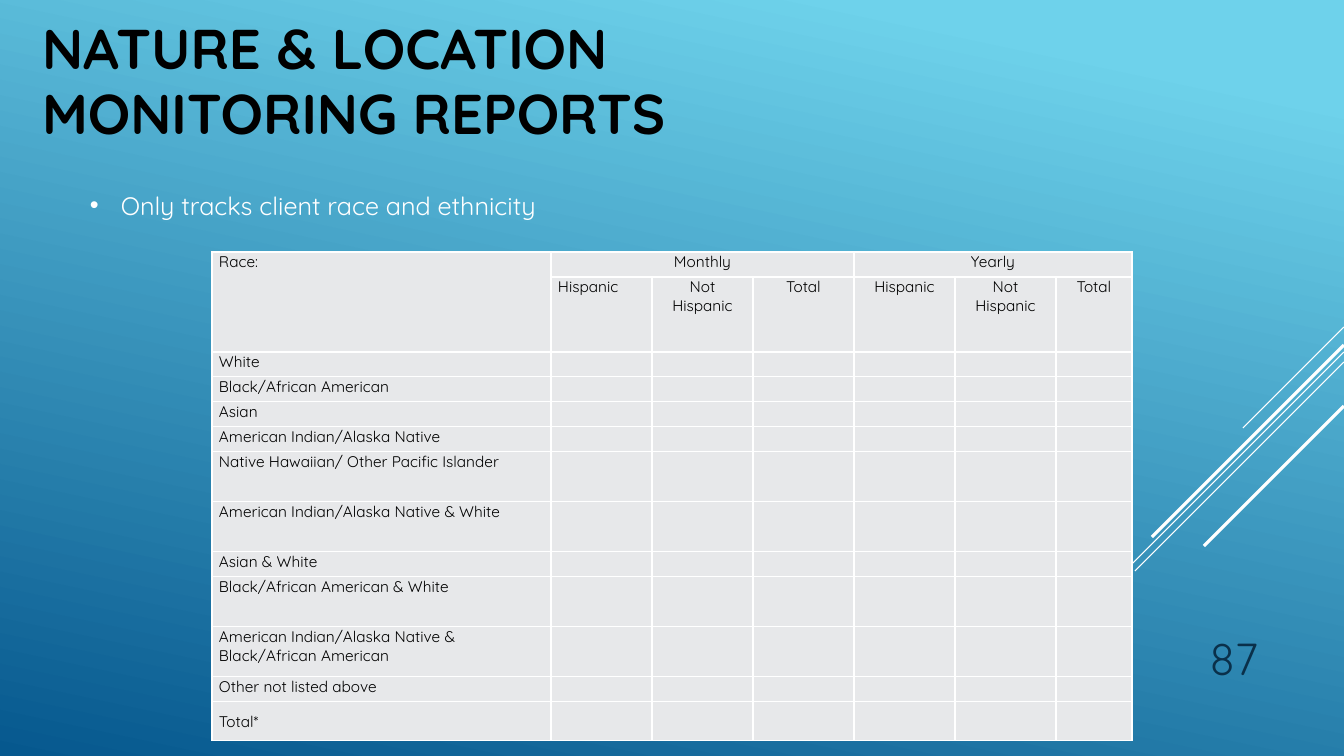
from dataclasses import dataclass

from lxml.etree import SubElement
from pptx import Presentation
from pptx.dml.color import RGBColor
from pptx.enum.shapes import MSO_CONNECTOR
from pptx.enum.text import MSO_ANCHOR as Anchor, MSO_AUTO_SIZE as AutoSize, PP_ALIGN as Align
from pptx.oxml.ns import qn
from pptx.util import Pt

EMU_PER_PX = 914400 / 100.8
TITLE_ONLY = 5


def px(length):
    return round(length * EMU_PER_PX)


@dataclass(frozen=True)
class Theme:
    font: str = "Quicksand"
    sky: str = "6ED2EB"
    deep: str = "06588E"
    white: str = "FFFFFF"
    black: str = "000000"
    navy: str = "0A304A"
    cell: str = "E7E8EA"
    title_size: int = 40
    number_size: int = 32
    body_size: int = 18
    table_size: int = 11


class SlideBuilder:
    def __init__(self, slide, theme):
        self.slide = slide
        self.theme = theme

    def background(self, angle, stops):
        fill = self.slide.background.fill
        fill.gradient()
        fill.gradient_angle = 360 - angle
        for stop, (position, color) in zip(fill.gradient_stops, stops):
            stop.position = position
            stop.color.rgb = RGBColor.from_string(color)

    def style_font(self, font, size, color, bold=False):
        formats = {"name": self.theme.font, "size": Pt(size), "bold": bold}
        for name, value in formats.items():
            setattr(font, name, value)
        font.color.rgb = RGBColor.from_string(color)

    def fill_text(self, frame, lines, size, color, bold=False, align=Align.LEFT, line_spacing=None):
        frame.text = "\n".join(lines)
        for paragraph in frame.paragraphs:
            paragraph.alignment = align
            paragraph.line_spacing = line_spacing
            for run in paragraph.runs:
                self.style_font(run.font, size, color, bold)

    def title(self, box, lines):
        shape = self.slide.shapes.title
        shape.left, shape.top, shape.width, shape.height = map(px, box)
        frame = shape.text_frame
        formats = {"word_wrap": True, "vertical_anchor": Anchor.TOP, "auto_size": AutoSize.SHAPE_TO_FIT_TEXT}
        for name, value in formats.items():
            setattr(frame, name, value)
        self.fill_text(frame, lines, self.theme.title_size, self.theme.black, True, line_spacing=0.96)

    def text(self, box, line, size, color, align=Align.LEFT, anchor=Anchor.TOP):
        frame = self.slide.shapes.add_textbox(*map(px, box)).text_frame
        frame.word_wrap = True
        frame.vertical_anchor = anchor
        self.fill_text(frame, [line], size, color, align=align)
        return frame

    def bullet(self, box, line, indent):
        frame = self.text(box, line, self.theme.body_size, self.theme.white)
        properties = frame.paragraphs[0]._p.get_or_add_pPr()
        properties.set("marL", str(px(indent)))
        properties.set("indent", str(-px(indent)))
        SubElement(properties, qn("a:buFont"), typeface="Arial")
        SubElement(properties, qn("a:buChar"), char="•")

    def diagonal(self, right, top, run, weight):
        ends = map(px, (right, top, right - run, top + run))
        line = self.slide.shapes.add_connector(MSO_CONNECTOR.STRAIGHT, *ends)
        line.line.color.rgb = RGBColor.from_string(self.theme.white)
        line.line.width = Pt(weight)
        SubElement(line._element.spPr, qn("a:effectLst"))

    def table(self, left, top, columns, rows):
        box = map(px, (left, top, sum(columns), sum(rows)))
        table = self.slide.shapes.add_table(len(rows), len(columns), *box).table
        table.first_row = table.horz_banding = False
        for column, width in zip(table.columns, columns):
            column.width = px(width)
        for row, height in zip(table.rows, rows):
            row.height = px(height)
        for cell in table.iter_cells():
            self.style_cell(cell)
        return table

    def style_cell(self, cell):
        margins = {"margin_left": 7, "margin_right": 7, "margin_top": 0, "margin_bottom": 0}
        for name, value in margins.items():
            setattr(cell, name, px(value))
        properties = cell._tc.get_or_add_tcPr()
        for side in ("a:lnL", "a:lnR", "a:lnT", "a:lnB"):
            border = SubElement(properties, qn(side), w=str(Pt(1)))
            SubElement(SubElement(border, qn("a:solidFill")), qn("a:srgbClr"), val=self.theme.white)
        cell.fill.solid()
        cell.fill.fore_color.rgb = RGBColor.from_string(self.theme.cell)
        # Empty cells need the table's type size so that rows keep their height
        SubElement(cell.text_frame.paragraphs[0]._p, qn("a:endParaRPr"), sz=str(self.theme.table_size * 100))

    def cell_text(self, cell, line, align=Align.LEFT):
        self.fill_text(cell.text_frame, [line], self.theme.table_size, self.theme.black, align=align)


def main():
    presentation = Presentation()
    presentation.slide_width, presentation.slide_height = px(1344), px(756)
    theme = Theme()
    slide = presentation.slides.add_slide(presentation.slide_layouts[TITLE_ONLY])
    builder = SlideBuilder(slide, theme)

    # Background and diagonal accents
    builder.background(102, [(0.1, theme.sky), (1, theme.deep)])
    accents = [(327, 101, 0.75), (352, 329, 0.75), (362, 209, 0.75), (345, 192, 2.25), (406, 140, 2.25)]
    for top, run, weight in accents:
        builder.diagonal(1344, top, run, weight)

    # Slide number, title and bullet
    builder.text((1142, 615, 126, 74), "87", theme.number_size, theme.navy, Align.RIGHT, Anchor.BOTTOM)
    builder.title((32, 13, 1203, 146), ["NATURE & LOCATION", "MONITORING REPORTS"])
    builder.bullet((80, 185, 1000, 40), "Only tracks client race and ethnicity", 31)

    # Race and ethnicity table: label and row height
    races = [
        ("White", 25),
        ("Black/African American", 25),
        ("Asian", 25),
        ("American Indian/Alaska Native", 25),
        ("Native Hawaiian/ Other Pacific Islander", 50),
        ("American Indian/Alaska Native & White", 50),
        ("Asian & White", 25),
        ("Black/African American & White", 50),
        ("American Indian/Alaska Native & Black/African American", 50),
        ("Other not listed above", 25),
        ("Total*", 39),
    ]
    heights = [25, 75] + [height for _, height in races]
    table = builder.table(212, 252, [339] + [101] * 5 + [76], heights)

    # Header rows
    table.cell(0, 0).merge(table.cell(1, 0))
    builder.cell_text(table.cell(0, 0), "Race:")
    for first, period in ((1, "Monthly"), (4, "Yearly")):
        table.cell(0, first).merge(table.cell(0, first + 2))
        builder.cell_text(table.cell(0, first), period, Align.CENTER)
        for column, group in enumerate(("Hispanic", "Not Hispanic", "Total"), first):
            align = Align.LEFT if column == 1 else Align.CENTER
            builder.cell_text(table.cell(1, column), group, align)

    # Race labels, with the total set lower in its row
    for row, (race, _) in enumerate(races, 2):
        builder.cell_text(table.cell(row, 0), race)
    table.cell(len(heights) - 1, 0).margin_top = px(11)

    presentation.save("out.pptx")


if __name__ == "__main__":
    main()
